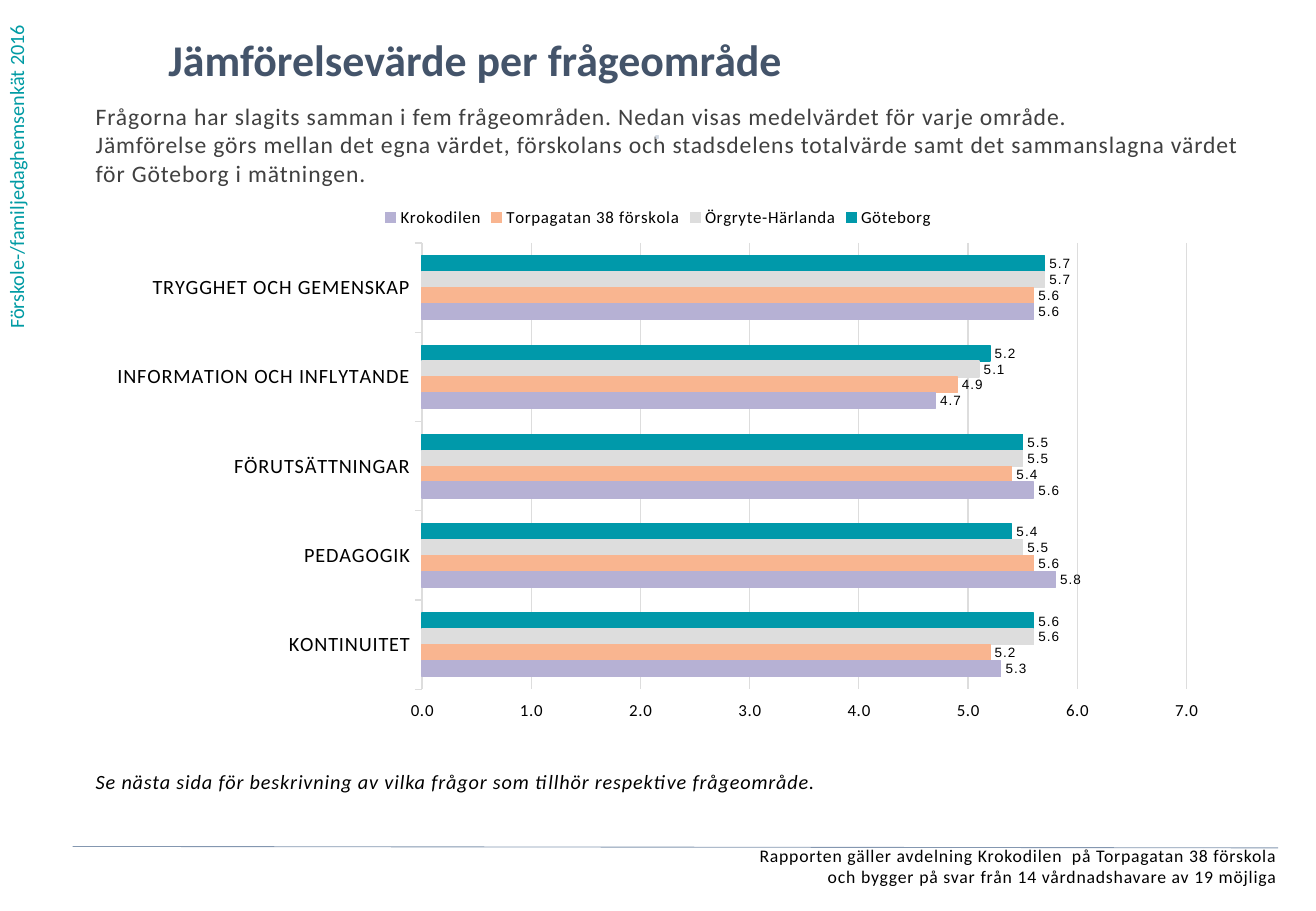
"""Build the slide that compares mean values per question area."""
import pptx
import pptx.chart.data
import pptx.dml.color
import pptx.enum.chart
import pptx.enum.shapes
import pptx.enum.text
import pptx.oxml
import pptx.oxml.ns
import pptx.util

Cm = pptx.util.Cm
Pt = pptx.util.Pt
qn = pptx.oxml.ns.qn
enums = pptx.enum.chart
align = pptx.enum.text.PP_ALIGN

hues = {
    "title": "44546A", "side": "009BA4", "intro": "404040", "text": "000000",
    "dot": "D2D9E2", "rule": "8497B0", "grid": "DDDDDD",
    "Göteborg": "0099AA", "Örgryte-Härlanda": "DDDDDD",
    "Torpagatan 38 förskola": "F9B590", "Krokodilen": "B6B1D4",
}


def shade(name):
    return pptx.dml.color.RGBColor.from_string(hues[name])


def write(shape, place, lines, size, hue, side=align.LEFT, space=50, **looks):
    shape.left, shape.top, shape.width, shape.height = map(Cm, place)
    frame = shape.text_frame
    setup = {
        "word_wrap": True, "auto_size": pptx.enum.text.MSO_AUTO_SIZE.NONE,
        "vertical_anchor": pptx.enum.text.MSO_ANCHOR.TOP,
        "margin_left": 0, "margin_top": 0, "margin_right": 0, "margin_bottom": 0,
    }
    for key, value in setup.items():
        setattr(frame, key, value)
    frame.text = "\n".join(lines)
    style = {"name": "Calibri", "size": Pt(size), **looks}
    for para in frame.paragraphs:
        para.alignment = side
        para.space_before = Pt(0)
        for run in para.runs:
            for key, value in style.items():
                setattr(run.font, key, value)
            run.font.color.rgb = shade(hue)
            run._r.get_or_add_rPr().set("spc", str(space))


deck = pptx.Presentation()
deck.slide_width, deck.slide_height = Cm(27.51), Cm(19.05)
slide = deck.slides.add_slide(deck.slide_layouts[1])
shapes = slide.shapes

write(shapes.title, (3.52, 0.69, 21.18, 1.45),
      ["Jämförelsevärde per frågeområde"], 26, "title", space=0, bold=True)

intro = slide.placeholders[1]
write(intro, (2, 2.13, 24.03, 2), [
    "Frågorna har slagits samman i fem frågeområden. Nedan visas medelvärdet för varje område.",
    "Jämförelse görs mellan det egna värdet, förskolans och stadsdelens totalvärde samt det "
    "sammanslagna värdet för Göteborg i mätningen.",
], 14, "intro")
for para in intro.text_frame.paragraphs:
    props = para._p.get_or_add_pPr()
    props.set("marL", "0")
    props.set("indent", "0")
    props.append(pptx.oxml.parse_xml(
        '<a:buNone xmlns:a="http://schemas.openxmlformats.org/drawingml/2006/main"/>'))

side = shapes.add_textbox(0, 0, 0, 0)
write(side, (0.08, 0, 0.64, 6.88),
      ["Förskole-/familjedaghemsenkät 2016"], 12, "side", space=0)
side.text_frame._txBody.bodyPr.set("vert", "vert270")

notes = [
    ((9.83, 2.59, 7.82, 0.99), ["⋅"], 12, "dot", align.CENTER, {"bold": True}),
    ((2, 16.08, 23.5, 0.6),
     ["Se nästa sida för beskrivning av vilka frågor som tillhör respektive frågeområde."],
     12, "text", align.LEFT, {"italic": True}),
    ((0.3, 17.67, 26.4, 1.1),
     ["Rapporten gäller avdelning Krokodilen  på Torpagatan 38 förskola",
      "och bygger på svar från 14 vårdnadshavare av 19 möjliga"],
     10.5, "text", align.RIGHT, {}),
]
for place, lines, size, hue, flow, looks in notes:
    write(shapes.add_textbox(0, 0, 0, 0), place, lines, size, hue, flow, **looks)

data = pptx.chart.data.CategoryChartData(number_format="0.0")
data.categories = ["TRYGGHET OCH GEMENSKAP", "INFORMATION OCH INFLYTANDE",
                   "FÖRUTSÄTTNINGAR", "PEDAGOGIK", "KONTINUITET"]
data.add_series("Göteborg", [5.7, 5.2, 5.5, 5.4, 5.6])
data.add_series("Örgryte-Härlanda", [5.7, 5.1, 5.5, 5.5, 5.6])
data.add_series("Torpagatan 38 förskola", [5.6, 4.9, 5.4, 5.6, 5.2])
data.add_series("Krokodilen", [5.6, 4.7, 5.6, 5.8, 5.3])
chart = shapes.add_chart(enums.XL_CHART_TYPE.BAR_CLUSTERED, Cm(2.01), Cm(4.07),
                         Cm(23.5), Cm(11.25), data).chart
chart.has_title = False
chart.has_legend = True
chart.legend.position = enums.XL_LEGEND_POSITION.TOP
chart.legend.include_in_layout = False

plot = chart.plots[0]
plot.gap_width, plot.overlap, plot.vary_by_categories = 162, 0, False
plot.has_data_labels = True
labels = plot.data_labels
labels.show_value = True
labels.position = enums.XL_LABEL_POSITION.OUTSIDE_END
for row in plot.series:
    row.format.fill.solid()
    row.format.fill.fore_color.rgb = shade(row.name)
    row.format.line.color.rgb = shade(row.name)
    row.format.line.width = Pt(0.75)

areas, scale = chart.category_axis, chart.value_axis
areas.reverse_order = True
areas.major_tick_mark = enums.XL_TICK_MARK.OUTSIDE
limits = {"minimum_scale": 0, "maximum_scale": 7, "major_unit": 1,
          "has_major_gridlines": True, "major_tick_mark": enums.XL_TICK_MARK.OUTSIDE,
          "tick_label_position": enums.XL_TICK_LABEL_POSITION.HIGH}
for key, value in limits.items():
    setattr(scale, key, value)
scale.format.line.fill.background()
for line in (areas.format.line, scale.major_gridlines.format.line):
    line.color.rgb = shade("grid")
    line.width = Pt(0.75)
for part in (labels, scale.tick_labels):
    part.number_format = "0.0"
    part.number_format_is_linked = False

fonts = [(chart, "Calibri", 10), (chart.legend, "Calibri", 10),
         (areas.tick_labels, "Calibri", 12), (scale.tick_labels, "Calibri", 10),
         (labels, "Arial", 8)]
for part, name, size in fonts:
    part.font.name, part.font.size = name, Pt(size)
    part.font.color.rgb = shade("text")
for props in chart._chartSpace.iter(qn("a:defRPr")):
    props.set("spc", "50")

field = chart._chartSpace.chart.plotArea
for old in field.findall(qn("c:layout")):
    field.remove(old)
field.insert(0, pptx.oxml.parse_xml(
    '<c:layout xmlns:c="http://schemas.openxmlformats.org/drawingml/2006/chart">'
    '<c:manualLayout><c:layoutTarget val="inner"/><c:xMode val="edge"/><c:yMode val="edge"/>'
    '<c:x val="0.29"/><c:y val="0.09"/><c:w val="0.68"/><c:h val="0.83"/>'
    '</c:manualLayout></c:layout>'))

rule = shapes.add_connector(pptx.enum.shapes.MSO_CONNECTOR.STRAIGHT,
                            Cm(1.52), Cm(17.7), Cm(26.72), Cm(17.73))
rule.line.color.rgb = shade("rule")
rule.line.width = Pt(0.5)
rule._element.spPr.append(pptx.oxml.parse_xml(
    '<a:effectLst xmlns:a="http://schemas.openxmlformats.org/drawingml/2006/main"/>'))

deck.save("out.pptx")
